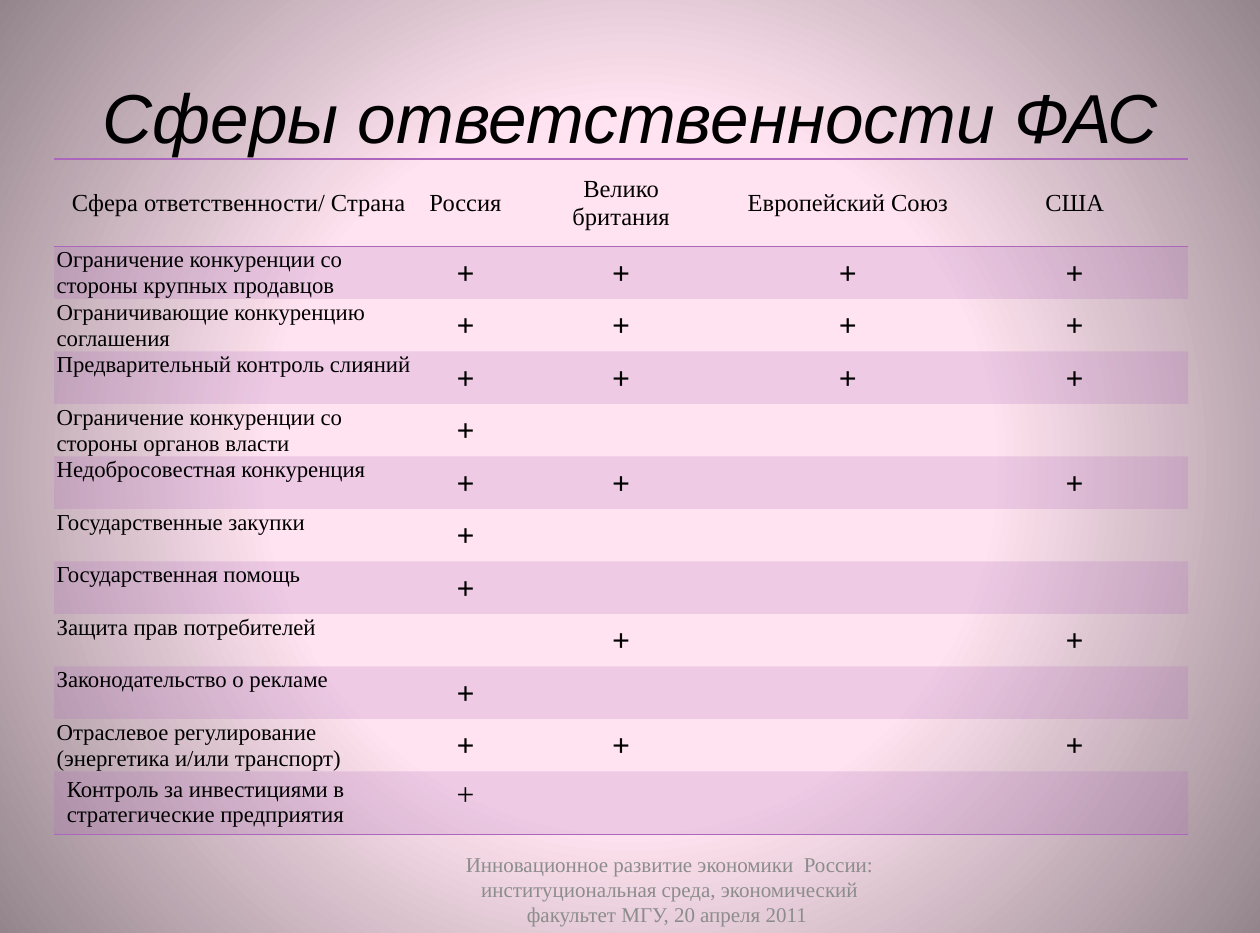
import pptx
import pptx.util
import pptx.dml.color
import pptx.enum.text
import pptx.oxml
import pptx.oxml.ns
from pptx.util import Inches

COLORS = {
    "light": "FFE3F0",
    "dark": "94858C",
    "accent": "AC66BB",
    "text": "000000",
    "footer": "8C8C8C",
}
SERIF = "Times New Roman"
NO_STYLE = "{2D5ABB26-0587-4C30-8999-92F81FD0307C}"
ALIGN = pptx.enum.text.PP_ALIGN
ANCHOR = pptx.enum.text.MSO_ANCHOR

HEADERS = ["Сфера ответственности/ Страна", "Россия", "Велико\vбритания",
           "Европейский Союз", "США"]
AREAS = [
    ("Ограничение конкуренции со стороны крупных продавцов", "++++"),
    ("Ограничивающие конкуренцию соглашения", "++++"),
    ("Предварительный контроль слияний", "++++"),
    ("Ограничение конкуренции со стороны органов власти", "+   "),
    ("Недобросовестная конкуренция", "++ +"),
    ("Государственные закупки", "+   "),
    ("Государственная помощь", "+   "),
    ("Защита прав потребителей", " + +"),
    ("Законодательство о рекламе", "+   "),
    ("Отраслевое регулирование (энергетика и/или транспорт)", "++ +"),
    ("Контроль за инвестициями в стратегические предприятия", "+   "),
]
COLUMN_WIDTHS = [2.93, 0.67, 1.8, 1.8, 1.8]
ROW_POINTS = [50] + [30] * 10 + [36]


def rgb(name):
    return pptx.dml.color.RGBColor.from_string(COLORS[name])


def format_runs(paragraph, font_name, size, color="text", bold=False, italic=False):
    for run in paragraph.runs:
        run.font.name = font_name
        run.font.size = pptx.util.Pt(size)
        run.font.bold = bold
        run.font.italic = italic
        run.font.color.rgb = rgb(color)


def place(shape, left, top, width, height):
    shape.left, shape.top = Inches(left), Inches(top)
    shape.width, shape.height = Inches(width), Inches(height)


def set_background(slide):
    fill = slide.background.fill
    fill.gradient()
    for stop, position, color in zip(fill.gradient_stops, (0.46, 1), ("light", "dark")):
        stop.position = position
        stop.color.rgb = rgb(color)
    gradient = slide.element.find(".//" + pptx.oxml.ns.qn("a:gradFill"))
    linear = gradient.find(pptx.oxml.ns.qn("a:lin"))
    gradient.replace(linear, pptx.oxml.parse_xml(
        f'<a:path {pptx.oxml.ns.nsdecls("a")} path="circle">'
        '<a:fillToRect l="50000" t="50000" r="50000" b="50000"/></a:path>'))


def add_title(slide, left, top, width, height):
    title = slide.shapes.title
    place(title, left, top, width, height)
    frame = title.text_frame
    frame.text = "Сферы ответственности ФАС"
    frame.vertical_anchor = ANCHOR.MIDDLE
    frame.word_wrap = True
    paragraph = frame.paragraphs[0]
    paragraph.alignment = ALIGN.CENTER
    format_runs(paragraph, "Arial", 39.6, italic=True)


def set_borders(cell, sides):
    properties = cell._tc.get_or_add_tcPr()
    for index, side in enumerate(sides):
        properties.insert(index, pptx.oxml.parse_xml(
            f'<a:ln{side} {pptx.oxml.ns.nsdecls("a")} w="12700"><a:solidFill>'
            f'<a:srgbClr val="{COLORS["accent"]}"/></a:solidFill></a:ln{side}>'))


def fill_band(cell):
    cell.fill.solid()
    cell.fill.fore_color.rgb = rgb("accent")
    color = cell._tc.tcPr.find(".//" + pptx.oxml.ns.qn("a:srgbClr"))
    color.append(pptx.oxml.parse_xml(
        f'<a:alpha {pptx.oxml.ns.nsdecls("a")} val="20000"/>'))


def write_cell(cell, text, size, bold, centered, middle, compact):
    cell.text_frame.text = text
    paragraph = cell.text_frame.paragraphs[0]
    paragraph.alignment = ALIGN.CENTER if centered else ALIGN.LEFT
    cell.vertical_anchor = ANCHOR.MIDDLE if middle else ANCHOR.TOP
    if compact:
        paragraph.line_spacing = 1.05
        cell.margin_left = cell.margin_right = Inches(0.02)
        cell.margin_top = cell.margin_bottom = 0
    format_runs(paragraph, SERIF, size, bold=bold)


def add_responsibility_table(slide, left, top, width, height):
    rows = [HEADERS] + [[area, *marks] for area, marks in AREAS]
    frame = slide.shapes.add_table(len(rows), len(HEADERS), Inches(left), Inches(top),
                                   Inches(width), Inches(height))
    table = frame.table
    table.horz_banding = False
    table._tbl.tblPr.find(pptx.oxml.ns.qn("a:tableStyleId")).text = NO_STYLE
    for column, column_width in zip(table.columns, COLUMN_WIDTHS):
        column.width = Inches(column_width)
    for row, points in zip(table.rows, ROW_POINTS):
        row.height = pptx.util.Pt(points)

    last = len(rows) - 1
    for row_index, values in enumerate(rows):
        header, final = row_index == 0, row_index == last
        for column_index, value in enumerate(values):
            cell = table.cell(row_index, column_index)
            label = column_index == 0
            if value.strip():
                size = 14 if header else 13 if label else 18
                write_cell(cell, value, size,
                           bold=not (header or label or final),
                           centered=header or not label,
                           middle=header or not (label or final),
                           compact=not final)
            if row_index % 2:
                fill_band(cell)
            else:
                cell.fill.background()
            if header or final:
                set_borders(cell, "TB" if header else "B")


def add_footer(slide, left, top, width, height):
    box = slide.shapes.add_textbox(Inches(left), Inches(top), Inches(width), Inches(height))
    frame = box.text_frame
    frame.word_wrap = True
    frame.vertical_anchor = ANCHOR.MIDDLE
    frame.text = ("Инновационное развитие экономики  России: институциональная среда, "
                  "экономический факультет МГУ, 20 апреля 2011 ")
    paragraph = frame.paragraphs[0]
    paragraph.alignment = ALIGN.CENTER
    format_runs(paragraph, SERIF, 12, color="footer")


def main():
    presentation = pptx.Presentation()
    presentation.slide_width = pptx.util.Pt(720)
    presentation.slide_height = pptx.util.Pt(533)
    slide = presentation.slides.add_slide(presentation.slide_layouts[5])
    set_background(slide)
    add_title(slide, 0.5, 0.3, 9, 1.23)
    add_responsibility_table(slide, 0.43, 1.26, sum(COLUMN_WIDTHS), sum(ROW_POINTS) / 72)
    add_footer(slide, 3.42, 6.86, 3.79, 0.39)
    presentation.save("out.pptx")


if __name__ == "__main__":
    main()
